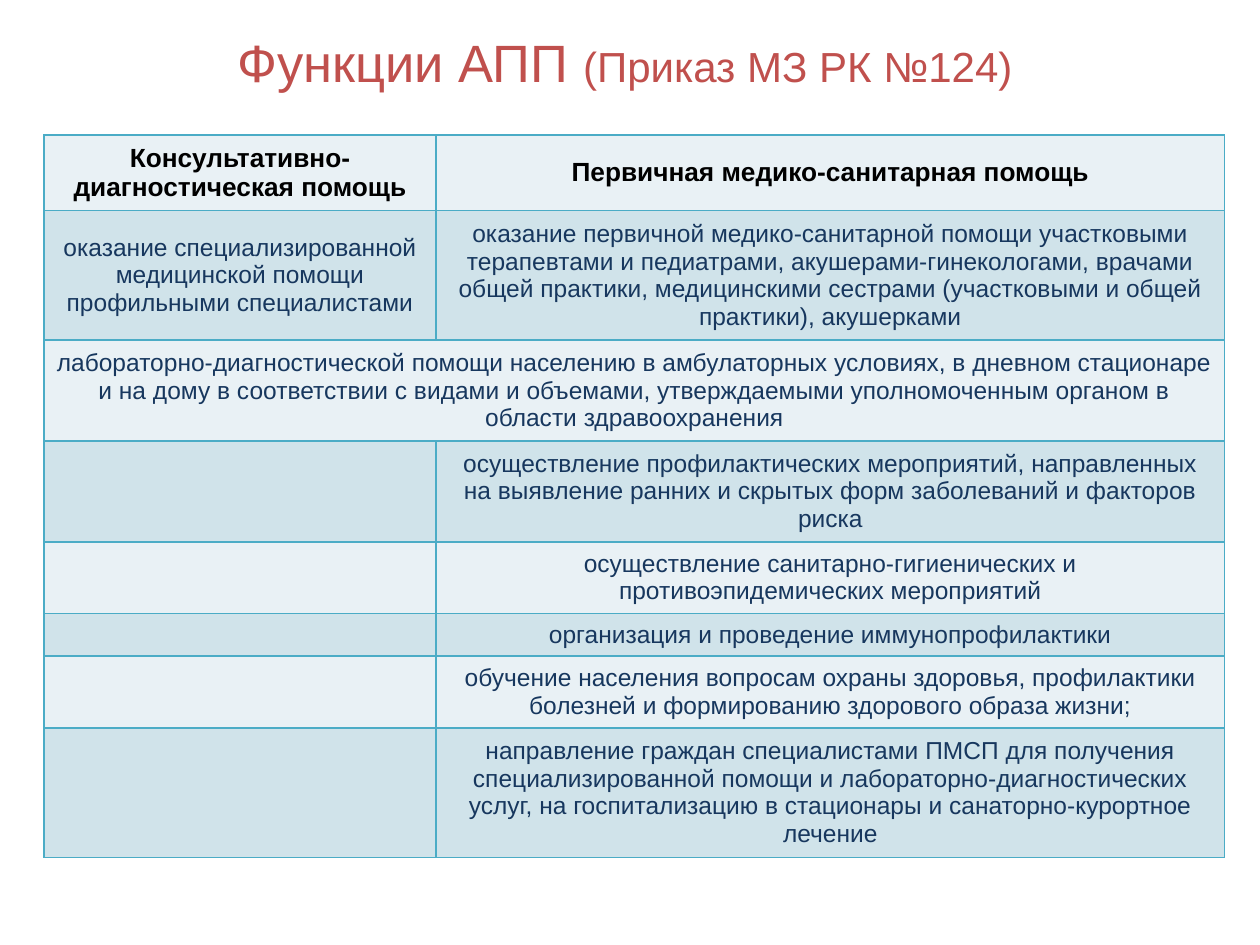
from dataclasses import dataclass

import pptx
import pptx.util
from lxml import etree
from pptx.dml.color import RGBColor
from pptx.enum.text import MSO_ANCHOR, MSO_AUTO_SIZE, PP_ALIGN
from pptx.oxml.ns import qn
from pptx.util import Inches


@dataclass(frozen=True)
class Theme:
    font: str = "Arial"
    title_color: str = "C0504D"
    header_color: str = "000000"
    body_color: str = "17375E"
    border_color: str = "4BACC6"
    bands: tuple = ("E9F1F5", "D0E3EA")
    title_size: int = 30
    subtitle_size: int = 24
    header_size: int = 15
    body_size: int = 14
    border_width: int = 1


THEME = Theme()

TITLE_SPANS = [
    ("Функции АПП ", THEME.title_size),
    ("(Приказ МЗ РК №124)", THEME.subtitle_size),
]
COLUMN_WIDTHS = [3.11, 6.26]
# Row height, then the cell texts; a row with one text spans both columns.
ROWS = [
    (0.6, "Консультативно-диагностическая помощь",
     "Первичная медико-санитарная помощь"),
    (1.03, "оказание специализированной медицинской помощи профильными специалистами",
     "оказание первичной медико-санитарной помощи участковыми терапевтами и "
     "педиатрами, акушерами-гинекологами, врачами общей практики, медицинскими "
     "сестрами (участковыми и общей практики), акушерками"),
    (0.8, "лабораторно-диагностической помощи населению в амбулаторных условиях, "
     "в дневном стационаре и на дому в соответствии с видами и объемами, "
     "утверждаемыми уполномоченным органом в области здравоохранения"),
    (0.8, "", "осуществление профилактических мероприятий, направленных на выявление "
     "ранних и скрытых форм заболеваний и факторов риска"),
    (0.57, "", "осуществление санитарно-гигиенических и противоэпидемических мероприятий"),
    (0.33, "", "организация и проведение иммунопрофилактики"),
    (0.57, "", "обучение населения вопросам охраны здоровья, профилактики болезней "
     "и формированию здорового образа жизни;"),
    (1.03, "", "направление граждан специалистами ПМСП для получения специализированной "
     "помощи и лабораторно-диагностических услуг, на госпитализацию в стационары "
     "и санаторно-курортное лечение"),
]


def format_span(span, size, color, bold=False):
    span.font.name = THEME.font
    span.font.size = pptx.util.Pt(size)
    span.font.bold = bold
    span.font.color.rgb = RGBColor.from_string(color)


def add_title(page, left, top, width, height):
    title = page.shapes.title
    title.left, title.top = Inches(left), Inches(top)
    title.width, title.height = Inches(width), Inches(height)
    frame = title.text_frame
    frame.word_wrap = True
    frame.auto_size = MSO_AUTO_SIZE.NONE
    frame.vertical_anchor = MSO_ANCHOR.MIDDLE
    para = frame.paragraphs[0]
    para.alignment = PP_ALIGN.CENTER
    for text, size in TITLE_SPANS:
        span = para.add_run()
        span.text = text
        format_span(span, size, THEME.title_color)


def set_borders(cell):
    properties = cell._tc.get_or_add_tcPr()
    for side in ("lnL", "lnR", "lnT", "lnB"):
        line = etree.SubElement(properties, qn(f"a:{side}"),
                                w=str(pptx.util.Pt(THEME.border_width)))
        fill = etree.SubElement(line, qn("a:solidFill"))
        etree.SubElement(fill, qn("a:srgbClr"), val=THEME.border_color)


def style_cell(cell, text, row):
    header = row == 0
    size = THEME.header_size if header else THEME.body_size
    color = THEME.header_color if header else THEME.body_color
    set_borders(cell)
    cell.fill.solid()
    cell.fill.fore_color.rgb = RGBColor.from_string(THEME.bands[row % 2])
    cell.vertical_anchor = MSO_ANCHOR.MIDDLE
    cell.text_frame.text = text
    para = cell.text_frame.paragraphs[0]
    para.alignment = PP_ALIGN.CENTER
    for span in para.runs:
        format_span(span, size, color, header)
    if not text:
        # An empty cell keeps the body size so that it does not stretch its row.
        etree.SubElement(para._p, qn("a:endParaRPr"), sz=str(size * 100))


def add_functions_table(page, left, top):
    width = sum(COLUMN_WIDTHS)
    height = sum(row[0] for row in ROWS)
    table = page.shapes.add_table(
        len(ROWS), len(COLUMN_WIDTHS),
        Inches(left), Inches(top), Inches(width), Inches(height)).table
    for column, column_width in zip(table.columns, COLUMN_WIDTHS):
        column.width = Inches(column_width)
    for index, (row_height, *texts) in enumerate(ROWS):
        table.rows[index].height = Inches(row_height)
        if len(texts) == 1:
            table.cell(index, 0).merge(table.cell(index, 1))
            texts.append("")
        for column, text in enumerate(texts):
            style_cell(table.cell(index, column), text, index)


def main():
    deck = pptx.Presentation()
    deck.slide_width, deck.slide_height = Inches(10), Inches(7.5)
    page = deck.slides.add_slide(deck.slide_layouts.get_by_name("Title Only"))
    add_title(page, 1.77, 0.05, 6.38, 0.87)
    add_functions_table(page, 0.35, 1.07)
    deck.save("out.pptx")


if __name__ == "__main__":
    main()
